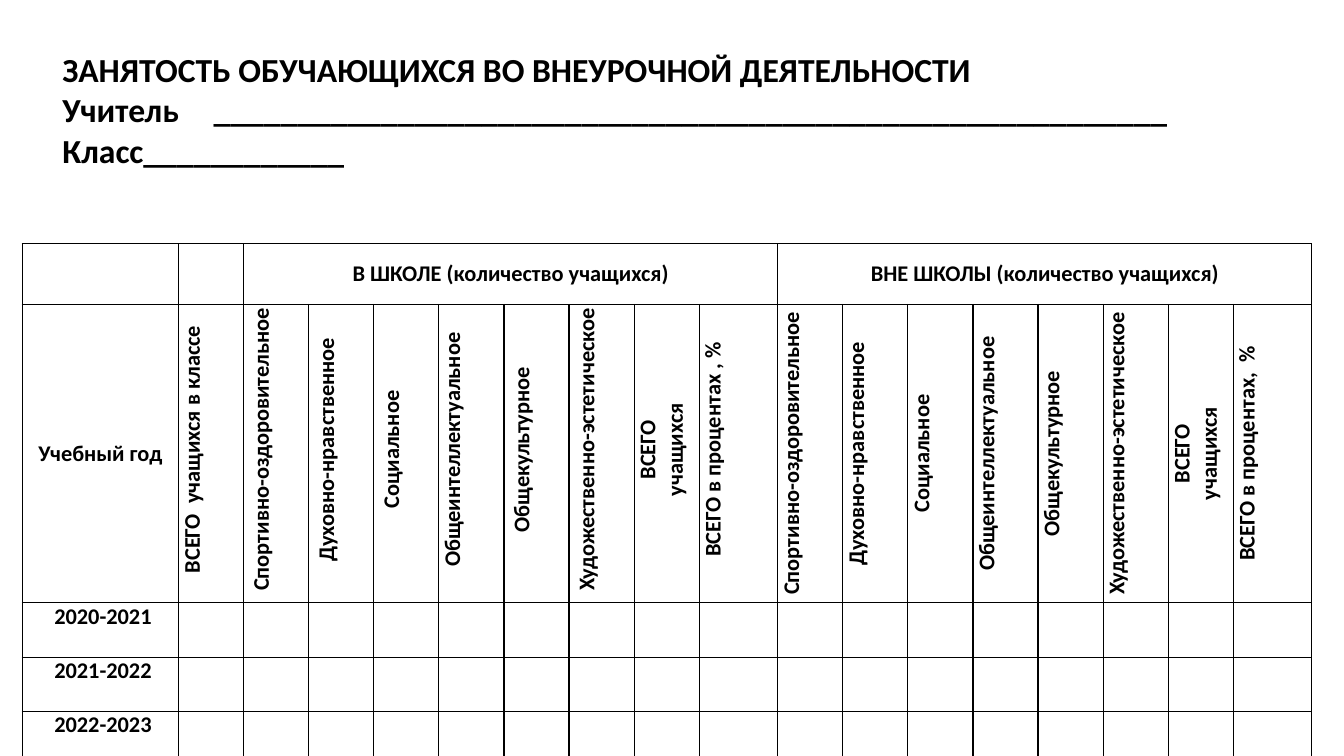
from lxml import etree
from pptx import Presentation
from pptx.dml.color import RGBColor
from pptx.enum.text import MSO_ANCHOR as Anchor, MSO_AUTO_SIZE as AutoSize, PP_ALIGN as Align
from pptx.oxml.ns import qn
from pptx.util import Cm, Pt

BLACK = "000000"
TIGHT = {"margin_left": Cm(0.03), "margin_right": Cm(0.03), "margin_top": 0, "margin_bottom": 0}
ROOMY = {side: Cm(0.1) for side in TIGHT}


def color(hex_value):
    return RGBColor.from_string(hex_value)


def write(frame, lines, size, align, indent=0, first_line=0):
    frame.text = "\n".join(lines)
    for paragraph in frame.paragraphs:
        paragraph.alignment = align
        properties = paragraph._p.get_or_add_pPr()
        properties.set("marL", str(indent))
        properties.set("indent", str(first_line))
        for run in paragraph.runs:
            for key, value in {"name": "Calibri", "size": Pt(size), "bold": True}.items():
                setattr(run.font, key, value)
            run.font.color.rgb = color(BLACK)


deck = Presentation()
deck.slide_width, deck.slide_height = Cm(33.87), Cm(19.05)
slide = deck.slides.add_slide(deck.slide_layouts[5])

heading = slide.shapes.title
place = {"left": Cm(1.32), "top": Cm(1.09), "width": Cm(31.78), "height": Cm(3.33)}
for key, value in place.items():
    setattr(heading, key, value)
heading_lines = [
    "ЗАНЯТОСТЬ ОБУЧАЮЩИХСЯ ВО ВНЕУРОЧНОЙ ДЕЯТЕЛЬНОСТИ",
    "Учитель\t" + "_" * 57,
    "Класс" + "_" * 12,
]
write(heading.text_frame, heading_lines, 24, Align.LEFT)
for key, value in {"vertical_anchor": Anchor.MIDDLE, "word_wrap": True,
                   "auto_size": AutoSize.SHAPE_TO_FIT_TEXT}.items():
    setattr(heading.text_frame, key, value)
teacher = heading.text_frame.paragraphs[1]._p.get_or_add_pPr()
tab_list = etree.SubElement(teacher, qn("a:tabLst"))
etree.SubElement(tab_list, qn("a:tab"), pos=str(Cm(3.71)), algn="l")

group_widths = [1.64] * 7 + [1.98]
column_widths = [3.94, 1.64] + group_widths * 2
row_heights = [1.53, 5.59] + [1.37] * 3
activity = slide.shapes.add_table(
    len(row_heights), len(column_widths), Cm(0.56), Cm(6.14),
    Cm(sum(column_widths)), Cm(sum(row_heights))).table
activity.first_row = activity.horz_banding = False
for column, width in zip(activity.columns, column_widths):
    column.width = Cm(width)
for row, height in zip(activity.rows, row_heights):
    row.height = Cm(height)

for cell in activity.iter_cells():
    cell.fill.background()
    borders = cell._tc.get_or_add_tcPr()
    for position, edge in enumerate(("lnL", "lnR", "lnT", "lnB")):
        border = etree.Element(qn("a:" + edge), w=str(Pt(1)))
        fill = etree.SubElement(border, qn("a:solidFill"))
        etree.SubElement(fill, qn("a:srgbClr"), val=BLACK)
        borders.insert(position, border)

directions = [
    "Спортивно-оздоровительное", "Духовно-нравственное", "Социальное",
    "Общеинтеллектуальное", "Общекультурное", "Художественно-эстетическое",
    "ВСЕГО\nучащихся",
]
labels = [
    (0, 0, "", TIGHT, Anchor.TOP, 0),
    (1, 0, "Учебный год", TIGHT, Anchor.MIDDLE, 0),
    (1, 1, "ВСЕГО  учащихся в классе", TIGHT, Anchor.TOP, 0.2),
]
groups = [
    (2, "В ШКОЛЕ (количество учащихся)", "ВСЕГО в процентах , %", ROOMY, 0.2),
    (10, "ВНЕ ШКОЛЫ (количество учащихся)", "ВСЕГО в процентах,  %", TIGHT, 0),
]
for start, group, percent, padding, indent in groups:
    activity.cell(0, start).merge(activity.cell(0, start + 7))
    labels.append((0, start, group, padding, Anchor.MIDDLE, 0))
    for offset, direction in enumerate(directions + [percent]):
        margins = TIGHT if offset in (3, 6, 7) else padding
        labels.append((1, start + offset, direction, margins, Anchor.MIDDLE, indent))
for offset, year in enumerate(("2020-2021", "2021-2022", "2022-2023")):
    labels.append((2 + offset, 0, year, TIGHT, Anchor.TOP, 0.1))

for row, column, label, margins, anchor, indent in labels:
    cell = activity.cell(row, column)
    first_line = Cm(0.03) if row > 1 else 0
    write(cell.text_frame, label.split("\n"), 16, Align.CENTER, Cm(indent), first_line)
    for key, value in {**margins, "vertical_anchor": anchor}.items():
        setattr(cell, key, value)
    if row == 1 and column > 0:
        cell._tc.get_or_add_tcPr().set("vert", "vert270")

deck.save("out.pptx")
